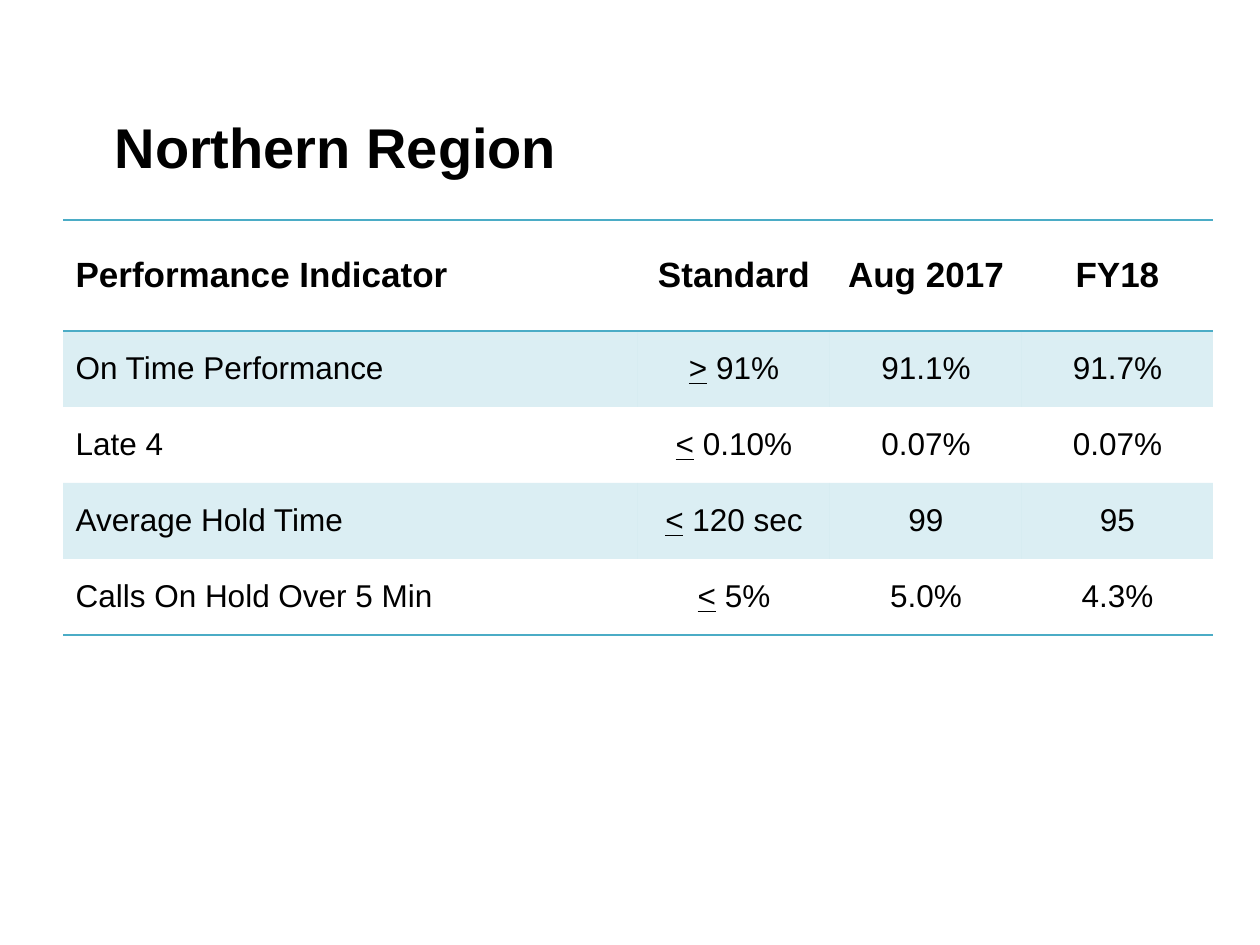
from lxml.etree import SubElement
from pptx import Presentation
from pptx.dml.color import RGBColor
from pptx.enum.text import MSO_ANCHOR as ANCHOR, PP_ALIGN as ALIGN
from pptx.oxml.ns import qn
from pptx.util import Pt

PX = 914400 // 126
TEAL = "4BACC6"
NO_STYLE = "{2D5ABB26-0587-4C30-8999-92F81FD0307C}"


def set_font(font, size, bold):
    font.name, font.size, font.bold = "Arial", Pt(size), bold
    font.color.rgb = RGBColor.from_string("000000")


def add_border(cell, side):
    line = SubElement(cell._tc.get_or_add_tcPr(), qn(f"a:{side}"), w=str(Pt(1)))
    SubElement(SubElement(line, qn("a:solidFill")), qn("a:srgbClr"), val=TEAL)


prs = Presentation()
prs.slide_width, prs.slide_height = 1260 * PX, 945 * PX
slide = prs.slides.add_slide(prs.slide_layouts[5])

# Title
title = slide.shapes.title
title.left, title.top, title.width, title.height = 102 * PX, 106 * PX, 1057 * PX, 81 * PX
title.text_frame.text = "Northern Region"
title.text_frame.vertical_anchor = ANCHOR.MIDDLE
heading = title.text_frame.paragraphs[0]
heading.alignment = ALIGN.LEFT
set_font(heading.font, 32, True)

# Performance table; a leading > or < is underlined to mean "or equal"
rows = [
    ("Performance Indicator", "Standard", "Aug 2017", "FY18"),
    ("On Time Performance", "> 91%", "91.1%", "91.7%"),
    ("Late 4", "< 0.10%", "0.07%", "0.07%"),
    ("Average Hold Time", "< 120 sec", "99", "95"),
    ("Calls On Hold Over 5 Min", "< 5%", "5.0%", "4.3%"),
]
col_widths = [575, 192, 192, 191]
row_heights = [111] + [76] * 4
table = slide.shapes.add_table(
    len(rows), len(col_widths), 63 * PX, 220 * PX,
    sum(col_widths) * PX, sum(row_heights) * PX).table
table.first_row = table.horz_banding = False
table._tbl.tblPr.find(qn("a:tableStyleId")).text = NO_STYLE
for column, width in zip(table.columns, col_widths):
    column.width = width * PX

for r, values in enumerate(rows):
    table.rows[r].height = row_heights[r] * PX
    for c, value in enumerate(values):
        cell = table.cell(r, c)
        cell.vertical_anchor = ANCHOR.MIDDLE
        entry = cell.text_frame.paragraphs[0]
        entry.alignment = ALIGN.CENTER if c else ALIGN.LEFT
        set_font(entry.font, 18 if r else 20, r == 0)
        if value[0] in "<>":
            sign = entry.add_run()
            sign.text, value = value[0], value[1:]
            sign.font.underline = True
        entry.add_run().text = value

        # Rules around the header and below the last row
        if r == 0:
            add_border(cell, "lnT")
        if r in (0, len(rows) - 1):
            add_border(cell, "lnB")

        # Bands at 20% opacity
        if r % 2:
            cell.fill.solid()
            cell.fill.fore_color.rgb = RGBColor.from_string(TEAL)
            band = cell._tc.tcPr.find(qn("a:solidFill")).find(qn("a:srgbClr"))
            SubElement(band, qn("a:alpha"), val="20000")
        else:
            cell.fill.background()

prs.save("out.pptx")
